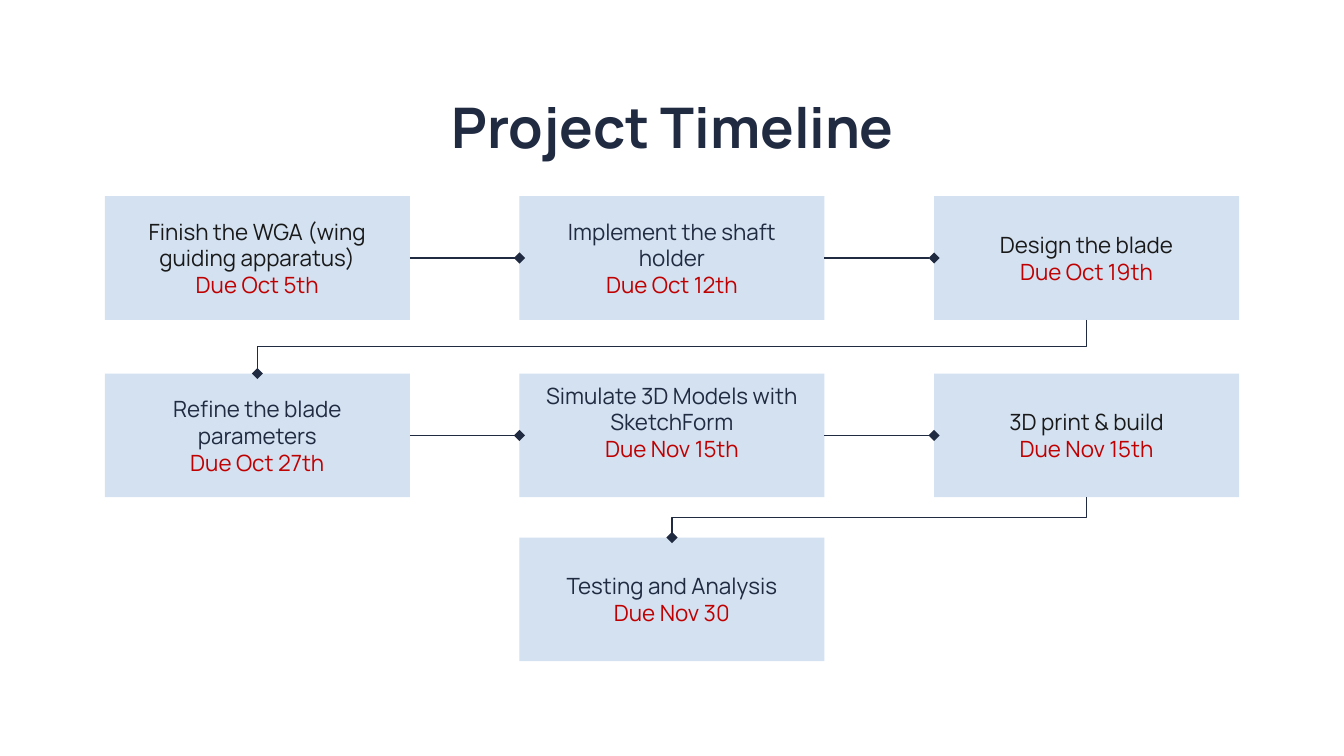
import pptx
import pptx.dml.color
import pptx.enum.shapes
import pptx.enum.text
import pptx.util
import pptx.oxml
import pptx.oxml.ns

FONT = "Manrope"
NAVY, BLACK, RED, PALE = "202A41", "191919", "C00000", "D3E1F1"
WIDE, HIGH = 10, 5.625
COLS, TALL = 3, 0.92
CARD = 2.27
ROWS = [0, 1.32, 2.54]
STEPS = [
    (0, 0, "Finish the WGA (wing guiding apparatus)", "Due Oct 5th", BLACK),
    (0, 1, "Implement the shaft holder", "Due Oct 12th", NAVY),
    (0, 2, "Design the blade", "Due Oct 19th", BLACK),
    (1, 0, "Refine the blade parameters", "Due Oct 27th", NAVY),
    (1, 1, "Simulate 3D Models with SketchForm", "Due Nov 15th", NAVY),
    (1, 2, "3D print & build", "Due Nov 15th", BLACK),
    (2, 1, "Testing and Analysis", "Due Nov 30", NAVY),
]
RAISED = (1, 1)


def inch(num):
    return pptx.util.Inches(num)


def paint(hue):
    return pptx.dml.color.RGBColor.from_string(hue)


def write(para, text, size, hue, bold=False):
    para.alignment = pptx.enum.text.PP_ALIGN.CENTER
    run = para.add_run()
    run.text = text
    run.font.name = FONT
    run.font.size = pptx.util.Pt(size)
    run.font.bold = bold
    run.font.color.rgb = paint(hue)


def pad(frame, top=0.1, base=0.1):
    frame.word_wrap = True
    frame.margin_left = frame.margin_right = inch(0.1)
    frame.margin_top, frame.margin_bottom = inch(top), inch(base)


def title(slide, box):
    frame = slide.shapes.add_textbox(*map(inch, box)).text_frame
    pad(frame)
    frame.vertical_anchor = pptx.enum.text.MSO_ANCHOR.TOP
    write(frame.paragraphs[0], "Project Timeline", 30, NAVY, True)


def card(slide, box, task, due, hue, lift):
    shape = slide.shapes.add_shape(
        pptx.enum.shapes.MSO_SHAPE.RECTANGLE, *map(inch, box))
    shape.shadow.inherit = False
    shape.fill.solid()
    shape.fill.fore_color.rgb = paint(PALE)
    shape.line.fill.background()
    frame = shape.text_frame
    pad(frame, *((0, 0.2) if lift else (0.1, 0.1)))
    frame.vertical_anchor = pptx.enum.text.MSO_ANCHOR.MIDDLE
    write(frame.paragraphs[0], task, 12, hue)
    write(frame.add_paragraph(), due, 12, RED)
    return shape


def join(slide, kind, start, out, end, into):
    line = slide.shapes.add_connector(kind, 0, 0, 0, 0)
    line.begin_connect(start, out)
    line.end_connect(end, into)
    line.line.color.rgb = paint(NAVY)
    line.line.width = pptx.util.Pt(0.75)
    tail = pptx.oxml.ns.qn("a:tailEnd")
    pen = line.line._get_or_add_ln()
    pen.append(pen.makeelement(tail, {"type": "diamond"}))
    props = line._element.spPr
    props.append(props.makeelement(pptx.oxml.ns.qn("a:effectLst"), {}))
    return line


def across(slide, start, end):
    kind = pptx.enum.shapes.MSO_CONNECTOR.STRAIGHT
    join(slide, kind, start, 3, end, 1)


def down(slide, start, end):
    line = join(slide, pptx.enum.shapes.MSO_CONNECTOR.ELBOW, start, 2, end, 0)
    wide, high = line.width, line.height
    midx, midy = line.left + wide // 2, line.top + high // 2
    line.left, line.top = midx - high // 2, midy - wide // 2
    line.width, line.height = high, wide
    frame = line._element.spPr.xfrm
    frame.flipH = False
    frame.set("rot", str(90 * 60000))


def flow(slide, box):
    left, top, wide, _ = box
    pitch = (wide - CARD) / (COLS - 1)
    cards = []
    for row, col, task, due, hue in STEPS:
        place = (left + col * pitch, top + ROWS[row], CARD, TALL)
        cards.append(card(slide, place, task, due, hue, (row, col) == RAISED))
    for num in range(len(cards) - 1):
        level = STEPS[num][0] == STEPS[num + 1][0]
        (across if level else down)(slide, cards[num], cards[num + 1])


def main():
    deck = pptx.Presentation()
    deck.slide_width, deck.slide_height = inch(WIDE), inch(HIGH)
    slide = deck.slides.add_slide(deck.slide_layouts[6])
    title(slide, (0.79, 0.59, 8.43, 0.63))
    flow(slide, (0.78, 1.46, 8.44, 3.46))
    deck.save("out.pptx")


if __name__ == "__main__":
    main()
